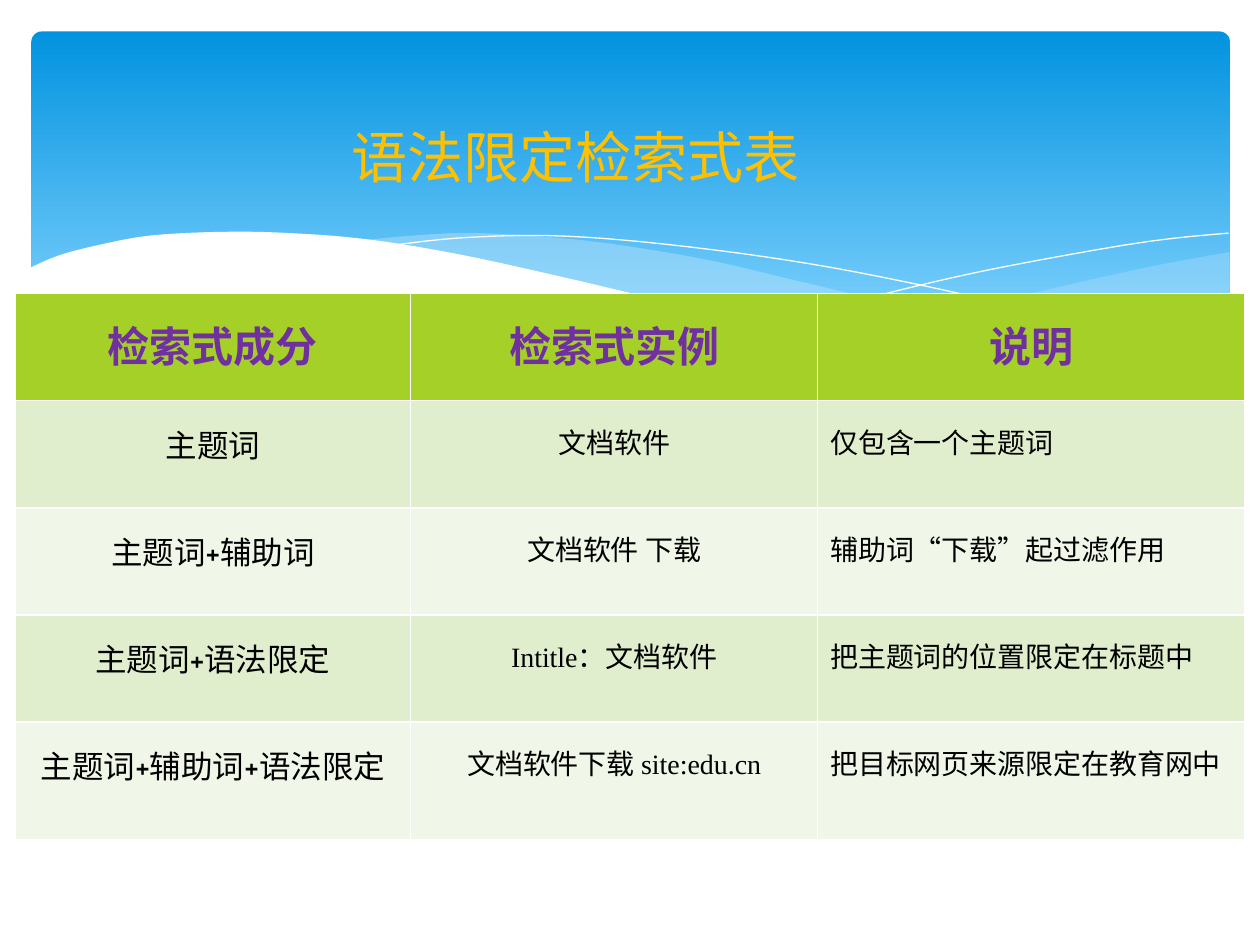
import pptx
import pptx.dml.color
import pptx.enum.shapes
import pptx.enum.text
import pptx.oxml
import pptx.oxml.ns
import pptx.util
from pptx.util import Inches

RGBColor = pptx.dml.color.RGBColor
ALIGN = pptx.enum.text.PP_ALIGN
SKY_TOP = RGBColor(0x02, 0x93, 0xE0)
SKY_BOTTOM = RGBColor(0x83, 0xD3, 0xFE)
MIST = RGBColor(0xC6, 0xE7, 0xFC)
WHITE = RGBColor(0xFF, 0xFF, 0xFF)
BLACK = RGBColor(0, 0, 0)
GOLD = RGBColor(0xFF, 0xC0, 0x00)
PURPLE = RGBColor(0x70, 0x30, 0xA0)
LIME = RGBColor(0xA5, 0xD0, 0x28)
BANDS = [RGBColor(0xE1, 0xEE, 0xCD), RGBColor(0xF0, 0xF7, 0xE8)]

TITLE = "语法限定检索式表"
HEADINGS = ["检索式成分", "检索式实例", "说明"]
QUERIES = [
    ("主题词", "文档软件", "仅包含一个主题词"),
    ("主题词+辅助词", "文档软件 下载", "辅助词“下载”起过滤作用"),
    ("主题词+语法限定", "Intitle：文档软件", "把主题词的位置限定在标题中"),
    ("主题词+辅助词+语法限定", "文档软件下载 site:edu.cn", "把目标网页来源限定在教育网中"),
]
HEADING_FORMAT = dict(size=24, font="Cabin", color=PURPLE, bold=True, align=ALIGN.CENTER)
COLUMN_FORMATS = [
    dict(size=18, font="Cabin", align=ALIGN.CENTER),
    dict(size=16, font="Times New Roman", align=ALIGN.CENTER),
    dict(size=16, font="Cabin", align=ALIGN.LEFT),
]
COLUMN_WIDTHS = [3.14, 3.23, 3.39]
ROW_HEIGHT = 0.85

RIGHT_WAVE = [
    [(9.76, 2), (9.21, 2.1), (8.61, 2.23), (7.53, 2.48), (6.61, 2.65)],
    [(6.61, 2.65), (7.32, 2.74), (8.03, 2.78), (8.72, 2.74), (9.35, 2.62), (9.76, 2.47)],
]
MIDDLE_WAVE = [
    [(8.93, 2.73), (8.07, 2.6), (7.06, 2.4), (6.29, 2.22), (5.55, 2.05), (4.65, 1.91),
     (3.8, 1.85), (3.28, 1.87), (2.86, 1.91)],
    [(2.86, 1.91), (3.62, 2.03), (4.49, 2.22), (5.3, 2.4), (6.18, 2.58), (6.95, 2.7),
     (7.61, 2.77), (8.28, 2.78), (8.93, 2.73)],
]
FALLING_LINE = [[(3.09, 1.95), (3.63, 1.89), (4.33, 1.87), (5.1, 1.92), (6.08, 2.04),
                 (6.95, 2.19), (7.95, 2.41), (9.07, 2.72)]]
RISING_LINE = [[(6.13, 2.57), (6.95, 2.35), (7.76, 2.16), (8.66, 1.99), (9.24, 1.9), (9.75, 1.85)]]
WHITE_WAVE = [
    [(9.77, 2.46), (9.3, 2.62), (8.75, 2.73), (8.09, 2.77), (7.26, 2.72), (6.26, 2.58),
     (5.29, 2.39), (4.47, 2.2), (3.65, 2.02), (2.92, 1.9), (2.3, 1.85), (1.77, 1.84),
     (1.19, 1.87), (0.76, 1.95), (0.46, 2.03), (0.23, 2.13)],
    [(0.23, 3.29), (9.77, 3.29)],
]


def smooth(knots, steps=5):
    if len(knots) == 2:
        return knots
    padded = [knots[0], *knots, knots[-1]]
    curve = [knots[0]]
    for a, b, c, d in zip(padded, padded[1:], padded[2:], padded[3:]):
        for step in range(1, steps + 1):
            t = step / steps
            curve.append(tuple(
                0.5 * (2 * q + (r - p) * t + (2 * p - 5 * q + 4 * r - s) * t ** 2
                       + (3 * q - p - 3 * r + s) * t ** 3)
                for p, q, r, s in zip(a, b, c, d)))
    return curve


def add_wave(shapes, curves, fill=None, opacity=None):
    outline = [(Inches(x), Inches(y)) for curve in curves for x, y in smooth(curve)]
    builder = shapes.build_freeform(*outline[0])
    builder.add_line_segments(outline[1:], close=fill is not None)
    wave = builder.convert_to_shape()
    wave.shadow.inherit = False
    if fill is None:
        wave.fill.background()
        wave.line.color.rgb = WHITE
        wave.line.width = pptx.util.Pt(0)
        return
    wave.line.fill.background()
    wave.fill.solid()
    wave.fill.fore_color.rgb = fill
    if opacity:
        color = wave._element.spPr.find(".//" + pptx.oxml.ns.qn("a:srgbClr"))
        color.append(pptx.oxml.parse_xml(
            f'<a:alpha {pptx.oxml.ns.nsdecls("a")} val="{opacity * 1000}"/>'))


def write(frame, text, size, font, color=BLACK, bold=False, align=ALIGN.CENTER):
    paragraph = frame.paragraphs[0]
    paragraph.alignment = align
    run = paragraph.add_run()
    run.text = text
    run.font.size = pptx.util.Pt(size)
    run.font.name = font
    run.font.bold = bold
    run.font.color.rgb = color


def add_banner(shapes):
    sky = shapes.add_shape(pptx.enum.shapes.MSO_SHAPE.ROUNDED_RECTANGLE,
                           Inches(0.25), Inches(0.25), Inches(9.51), Inches(2.7))
    sky.adjustments[0] = 0.03
    sky.shadow.inherit = False
    sky.line.fill.background()
    sky.fill.gradient()
    sky.fill.gradient_angle = 270
    for stop, color, position in zip(sky.fill.gradient_stops, (SKY_TOP, SKY_BOTTOM), (0, 0.9)):
        stop.color.rgb = color
        stop.position = position
    add_wave(shapes, RIGHT_WAVE, MIST, 29)
    add_wave(shapes, MIDDLE_WAVE, MIST, 40)
    add_wave(shapes, FALLING_LINE)
    add_wave(shapes, RISING_LINE)
    add_wave(shapes, WHITE_WAVE, WHITE)


def add_query_table(shapes):
    rows = [HEADINGS, *QUERIES]
    table = shapes.add_table(len(rows), len(HEADINGS), Inches(0.12), Inches(2.33),
                             Inches(sum(COLUMN_WIDTHS)), Inches(ROW_HEIGHT * len(rows))).table
    for column, width in zip(table.columns, COLUMN_WIDTHS):
        column.width = Inches(width)
    for r, texts in enumerate(rows):
        table.rows[r].height = Inches(ROW_HEIGHT)
        for c, text in enumerate(texts):
            cell = table.cell(r, c)
            cell.margin_top = Inches(0.16)
            cell.fill.solid()
            cell.fill.fore_color.rgb = BANDS[(r - 1) % 2] if r else LIME
            write(cell.text_frame, text, **(COLUMN_FORMATS[c] if r else HEADING_FORMAT))


def main():
    deck = pptx.Presentation()
    deck.slide_width, deck.slide_height = Inches(10), Inches(7.5)
    slide = deck.slides.add_slide(deck.slide_layouts[5])
    add_banner(slide.shapes)
    add_query_table(slide.shapes)
    title = slide.shapes.title
    title.left, title.top, title.width, title.height = map(Inches, (1.3, 0.92, 6.54, 0.64))
    title.text_frame.auto_size = pptx.enum.text.MSO_AUTO_SIZE.SHAPE_TO_FIT_TEXT
    write(title.text_frame, TITLE, size=32, font="Noto Sans CJK SC", color=GOLD)
    slide.shapes._spTree.append(title._element)
    deck.save("out.pptx")


if __name__ == "__main__":
    main()
